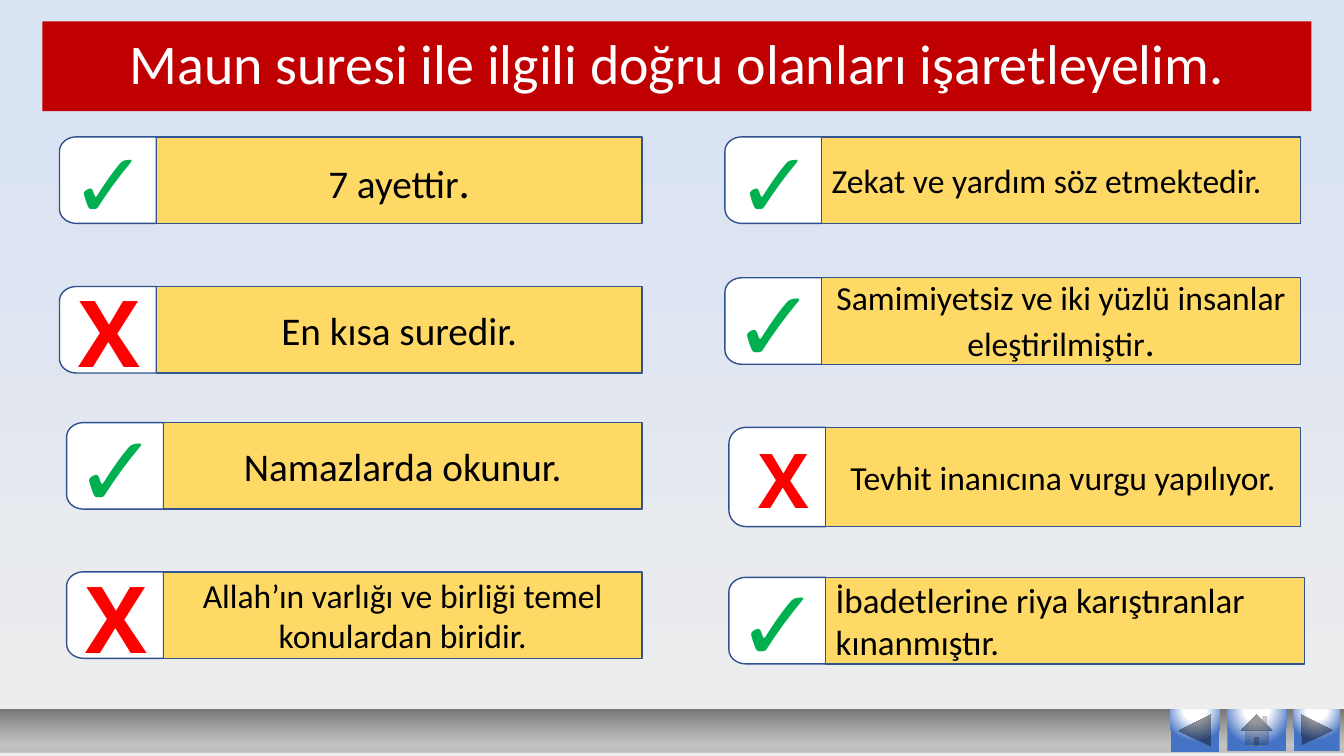
import math
from collections import namedtuple

from lxml import etree
from pptx import Presentation
from pptx.dml.color import RGBColor
from pptx.enum import shapes, text
from pptx.oxml import ns
from pptx.util import Cm, Pt

BLACK = RGBColor(0x00, 0x00, 0x00)
WHITE = RGBColor(0xFF, 0xFF, 0xFF)
RED = RGBColor(0xFF, 0x00, 0x00)
GREEN = RGBColor(0x00, 0xB0, 0x50)
TITLE_RED = RGBColor(0xC0, 0x00, 0x00)
YELLOW = RGBColor(0xFF, 0xD9, 0x66)
MARK_BLUE = RGBColor(0x2F, 0x52, 0x8F)
BAR_BLUE = RGBColor(0x32, 0x54, 0x91)
PALE_GREY = RGBColor(0xED, 0xED, 0xED)
PALE_BLUE = RGBColor(0xDA, 0xE3, 0xF3)
SILVER = RGBColor(0xC0, 0xC0, 0xC0)
MID_GREY = RGBColor(0xB3, 0xB3, 0xB3)
DARK_GREY = RGBColor(0x77, 0x77, 0x77)
BUTTON_BLUE = RGBColor(0x44, 0x72, 0xC4)

CENTER = text.PP_ALIGN.CENTER
LEFT = text.PP_ALIGN.LEFT
CHECK, CROSS = "✓", "X"
MARK_WIDTH = 2.44
ROW_HEIGHT = 2.18
MARK_SHIFT = 0.04

# Lengths in centimetres, text sizes in points; spans are (text, size) pairs
Statement = namedtuple(
    "Statement", "left top right mark mark_size spans align height shift",
    defaults=(CENTER, ROW_HEIGHT, MARK_SHIFT))

STATEMENTS = [
    Statement(1.5, 3.45, 16.18, CHECK, 66, [("7 ayettir", 28), (".", 32)]),
    Statement(1.5, 7.22, 16.18, CROSS, 66, [("En kısa suredir.", 28)]),
    Statement(1.68, 10.65, 16.18, CHECK, 72, [("Namazlarda okunur.", 28)]),
    Statement(1.68, 14.41, 16.18, CROSS, 66,
              [("Allah’ın varlığı ve birliği temel konulardan biridir.", 24)]),
    Statement(18.27, 3.45, 32.77, CHECK, 66,
              [("Zekat ve yardım söz etmektedir.", 24)], LEFT),
    Statement(18.27, 7, 32.77, CHECK, 72,
              [("Samimiyetsiz ve iki yüzlü insanlar eleştirilmiştir", 24),
               (".", 28)]),
    Statement(18.37, 10.77, 32.77, CROSS, 54,
              [("Tevhit inanıcına vurgu yapılıyor.", 24)], CENTER, 2.5, 0.17),
    Statement(18.37, 14.55, 32.87, CHECK, 72,
              [("İbadetlerine riya karıştıranlar kınanmıştır.", 25)], LEFT),
]

BUTTONS = [
    (shapes.MSO_SHAPE.ACTION_BUTTON_BACK_OR_PREVIOUS, 29.5, 1.23, 1.07),
    (shapes.MSO_SHAPE.ACTION_BUTTON_FORWARD_OR_NEXT, 32.61, 1.15, 1.04),
    (shapes.MSO_SHAPE.ACTION_BUTTON_HOME, 30.93, 1.48, 1.04),
]


def paint_gradient(owner, fill, stops, radial=False):
    """Stops are (percent, colour, opacity); linear ones run upwards."""
    fill.gradient()
    gradient = owner.element.find(".//" + ns.qn("a:gradFill"))
    for child in list(gradient):
        gradient.remove(child)

    def add(parent, tag, **attributes):
        return etree.SubElement(parent, ns.qn("a:" + tag), attributes)

    stop_list = add(gradient, "gsLst")
    for position, colour, opacity in stops:
        stop = add(stop_list, "gs", pos=str(position * 1000))
        shade = add(stop, "srgbClr", val=str(colour))
        if opacity < 100:
            add(shade, "alpha", val=str(opacity * 1000))
    if radial:
        circle = add(gradient, "path", path="circle")
        add(circle, "fillToRect", l="50000", t="-80000", r="50000", b="180000")
    else:
        add(gradient, "lin", ang="16200000", scaled="0")


def style_shape(shape, fill_colour, line_colour):
    shape.shadow.inherit = False
    shape.fill.solid()
    shape.fill.fore_color.rgb = fill_colour
    shape.line.color.rgb = line_colour
    shape.line.width = Pt(1)


def style_paragraph(para, align, name, size, colour, bold=False):
    para.alignment = align
    para.font.name = name
    para.font.size = Pt(size)
    para.font.color.rgb = colour
    para.font.bold = bold


def add_mark_frame(group, item):
    """Draw a box whose two left corners are rounded."""
    left, top, height = item.left, item.top, item.height
    right, bottom = left + MARK_WIDTH, top + height
    radius_x, radius_y = 0.43, height / 6
    points = [(right, top), (right, bottom)]
    for start, center_y in ((90, bottom - radius_y), (180, top + radius_y)):
        for step in range(11):
            angle = math.radians(start + 9 * step)
            points.append((left + radius_x + radius_x * math.cos(angle),
                           center_y + radius_y * math.sin(angle)))
    points = [(Cm(x), Cm(y)) for x, y in points]
    builder = group.shapes.build_freeform(*points[0])
    builder.add_line_segments(points[1:], close=True)
    style_shape(builder.convert_to_shape(), WHITE, MARK_BLUE)


def add_statement_bar(group, item):
    left = item.left + MARK_WIDTH
    bar = group.shapes.add_shape(
        shapes.MSO_SHAPE.RECTANGLE, Cm(left), Cm(item.top),
        Cm(item.right - left), Cm(item.height))
    style_shape(bar, YELLOW, BAR_BLUE)
    bar.text_frame.word_wrap = True
    bar.text_frame.vertical_anchor = text.MSO_ANCHOR.MIDDLE
    para = bar.text_frame.paragraphs[0]
    base_size = item.spans[0][1]
    style_paragraph(para, item.align, "Calibri", base_size, BLACK)
    for wording, size in item.spans:
        span = para.add_run()
        span.text = wording
        if size != base_size:
            span.font.size = Pt(size)


def add_mark(page, item):
    is_check = item.mark == CHECK
    width = 3.63 if is_check else 2.08
    height = item.mark_size * 0.0425 + 0.27
    center_x = item.left + MARK_WIDTH / 2 + item.shift
    center_y = item.top + item.height / 2 + MARK_SHIFT
    box = page.shapes.add_textbox(
        Cm(center_x - width / 2), Cm(center_y - height / 2),
        Cm(width), Cm(height))
    box.text_frame.word_wrap = is_check
    para = box.text_frame.paragraphs[0]
    para.text = item.mark
    style_paragraph(para, CENTER, "TeX Gyre Bonum" if is_check else "Open Sans",
                    item.mark_size, GREEN if is_check else RED, bold=True)


def add_gradient_shape(page, kind, left, width, height, stops, radial=False):
    shape = page.shapes.add_shape(
        kind, Cm(left), Cm(17.88), Cm(width), Cm(height))
    shape.shadow.inherit = False
    shape.line.fill.background()
    paint_gradient(shape, shape.fill, stops, radial)


def set_title(page, wording):
    title = page.shapes.title
    title.left, title.top = Cm(1.07), Cm(0.54)
    title.width, title.height = Cm(31.98), Cm(2.26)
    title.fill.solid()
    title.fill.fore_color.rgb = TITLE_RED
    title.text_frame.auto_size = text.MSO_AUTO_SIZE.NONE
    title.text_frame.vertical_anchor = text.MSO_ANCHOR.MIDDLE
    para = title.text_frame.paragraphs[0]
    para.text = wording
    para.line_spacing = 0.9
    style_paragraph(para, CENTER, "Calibri", 40, WHITE)


def main():
    deck = Presentation()
    deck.slide_width, deck.slide_height = Cm(33.87), Cm(19.05)
    page = deck.slides.add_slide(deck.slide_layouts[5])

    # Background and title
    paint_gradient(page, page.background.fill,
                   [(0, PALE_GREY, 100), (84, PALE_BLUE, 100)])
    set_title(page, "Maun suresi ile ilgili doğru olanları işaretleyelim.")

    # Statements with their marks
    for item in STATEMENTS:
        group = page.shapes.add_group_shape()
        add_mark_frame(group, item)
        add_statement_bar(group, item)
        add_mark(page, item)

    # Navigation strip
    add_gradient_shape(page, shapes.MSO_SHAPE.RECTANGLE, 0, 33.87, 1.07,
                       [(0, SILVER, 100), (17, MID_GREY, 70),
                        (100, DARK_GREY, 100)])
    for kind, left, width, height in BUTTONS:
        add_gradient_shape(page, kind, left, width, height,
                           [(0, WHITE, 100), (35, WHITE, 100),
                            (100, BUTTON_BLUE, 100)], radial=True)

    deck.save("out.pptx")


if __name__ == "__main__":
    main()
